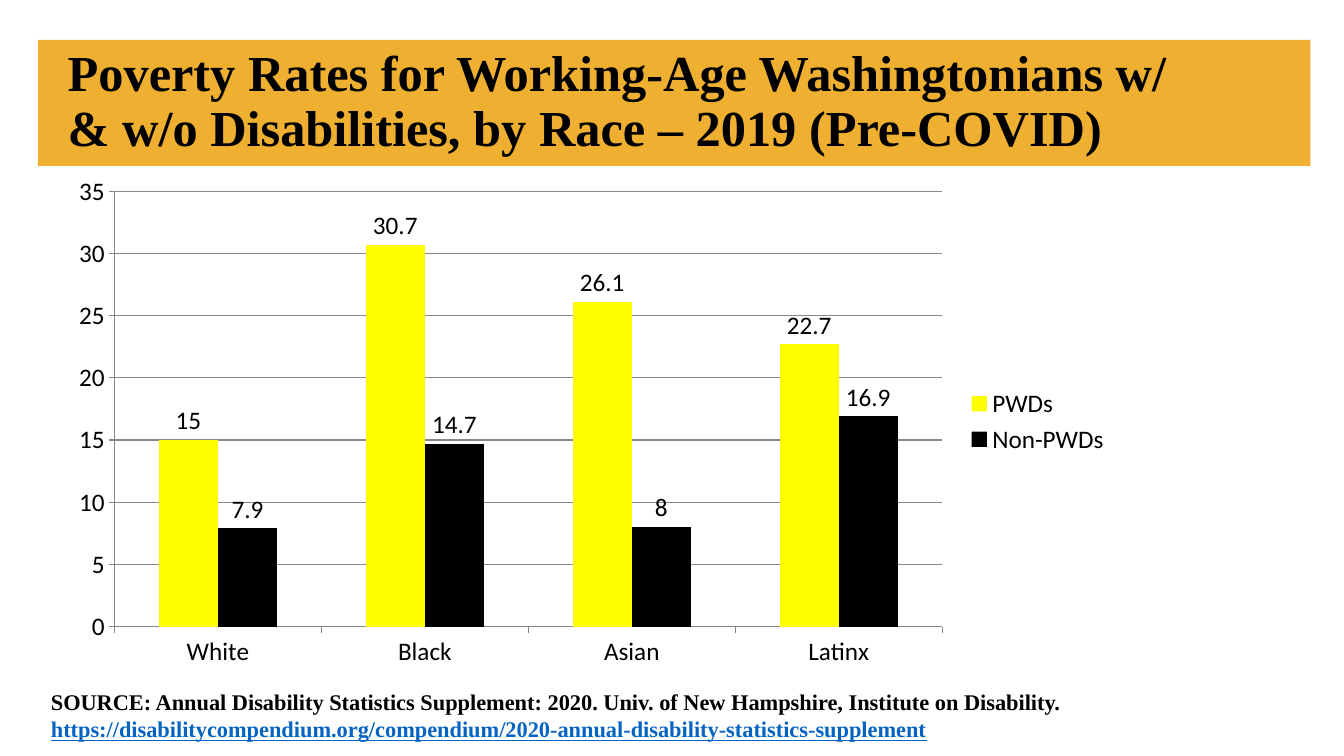
from dataclasses import dataclass

from pptx import Presentation
from pptx.chart.data import CategoryChartData
from pptx.dml.color import RGBColor
from pptx.enum.chart import XL_CHART_TYPE, XL_LABEL_POSITION, XL_LEGEND_POSITION, XL_TICK_MARK
from pptx.enum.shapes import MSO_SHAPE
from pptx.enum.text import MSO_ANCHOR
from pptx.slide import Slide
from pptx.text.text import Font
from pptx.util import Emu, Pt

EMU_PER_PX = 9525


@dataclass(frozen=True)
class Theme:
    band: str = "EFAF30"
    text: str = "000000"
    link: str = "0563C1"
    grid: str = "868686"
    heading_font: str = "Times New Roman"
    chart_font: str = "Calibri"
    title_size: int = 36
    source_size: int = 16
    chart_size: int = 18


@dataclass(frozen=True)
class Box:
    left: int
    top: int
    width: int
    height: int

    def emu(self) -> tuple[Emu, ...]:
        return tuple(Emu(length * EMU_PER_PX)
                     for length in (self.left, self.top, self.width, self.height))


@dataclass(frozen=True)
class Line:
    text: str
    color: str
    underline: bool = False


@dataclass(frozen=True)
class TextBlock:
    box: Box
    lines: tuple[Line, ...]
    size: int
    anchor: MSO_ANCHOR = MSO_ANCHOR.TOP
    line_spacing: float = 1.0


@dataclass(frozen=True)
class RateSeries:
    name: str
    values: tuple[float, ...]
    color: str


THEME = Theme()
BAND = Box(36, 38, 1212, 120)
CHART = Box(55, 158, 1012, 487)
RACES = ("White", "Black", "Asian", "Latinx")
RATES = (
    RateSeries("PWDs", (15, 30.7, 26.1, 22.7), "FFFF00"),
    RateSeries("Non-PWDs", (7.9, 14.7, 8, 16.9), "000000"),
)
TEXT_BLOCKS = (
    TextBlock(
        Box(55, 38, 1104, 120),
        (Line("Poverty Rates for Working-Age Washingtonians w/ & w/o Disabilities, "
              "by Race – 2019 (Pre-COVID)", THEME.text),),
        THEME.title_size, MSO_ANCHOR.MIDDLE, 0.9,
    ),
    TextBlock(
        Box(39, 651, 1240, 87),
        (Line("SOURCE: Annual Disability Statistics Supplement: 2020. "
              "Univ. of New Hampshire, Institute on Disability.", THEME.text),
         Line("https://disabilitycompendium.org/compendium/"
              "2020-annual-disability-statistics-supplement", THEME.link, True)),
        THEME.source_size,
    ),
)


def style_font(font: Font, name: str, size: int, color: str) -> None:
    font.name = name
    font.size = Pt(size)
    font.color.rgb = RGBColor.from_string(color)


def draw_band(slide: Slide, box: Box) -> None:
    band = slide.shapes.add_shape(MSO_SHAPE.RECTANGLE, *box.emu())
    band.shadow.inherit = False
    band.fill.solid()
    band.fill.fore_color.rgb = RGBColor.from_string(THEME.band)
    band.line.fill.background()


def draw_text(slide: Slide, block: TextBlock) -> None:
    text_frame = slide.shapes.add_textbox(*block.box.emu()).text_frame
    text_frame.word_wrap = True
    text_frame.vertical_anchor = block.anchor
    text_frame.text = "\n".join(line.text for line in block.lines)
    for paragraph, line in zip(text_frame.paragraphs, block.lines):
        paragraph.line_spacing = block.line_spacing
        font = paragraph.runs[0].font
        style_font(font, THEME.heading_font, block.size, line.color)
        font.bold = True
        font.underline = line.underline


def draw_chart(slide: Slide, box: Box) -> None:
    chart_data = CategoryChartData()
    chart_data.categories = RACES
    for rate in RATES:
        chart_data.add_series(rate.name, rate.values)
    chart = slide.shapes.add_chart(
        XL_CHART_TYPE.COLUMN_CLUSTERED, *box.emu(), chart_data).chart
    style_font(chart.font, THEME.chart_font, THEME.chart_size, THEME.text)
    chart.has_title = False
    chart.has_legend = True
    chart.legend.position = XL_LEGEND_POSITION.RIGHT
    chart.legend.include_in_layout = False

    grid_color = RGBColor.from_string(THEME.grid)
    for axis in (chart.category_axis, chart.value_axis):
        axis.major_tick_mark = XL_TICK_MARK.OUTSIDE
        axis.minor_tick_mark = XL_TICK_MARK.NONE
        axis.format.line.color.rgb = grid_color
    value_axis = chart.value_axis
    value_axis.minimum_scale = 0
    value_axis.maximum_scale = 35
    value_axis.major_unit = 5
    value_axis.has_major_gridlines = True
    value_axis.major_gridlines.format.line.color.rgb = grid_color

    plot = chart.plots[0]
    plot.gap_width = 150
    plot.overlap = 0
    plot.vary_by_categories = False
    for series, rate in zip(plot.series, RATES):
        series.format.fill.solid()
        series.format.fill.fore_color.rgb = RGBColor.from_string(rate.color)
        series.data_labels.show_value = True
        series.data_labels.position = XL_LABEL_POSITION.OUTSIDE_END


def main() -> None:
    presentation = Presentation()
    presentation.slide_width = Emu(1280 * EMU_PER_PX)
    presentation.slide_height = Emu(720 * EMU_PER_PX)
    slide = presentation.slides.add_slide(presentation.slide_layouts[6])
    draw_band(slide, BAND)
    for block in TEXT_BLOCKS:
        draw_text(slide, block)
    draw_chart(slide, CHART)
    presentation.save("out.pptx")


if __name__ == "__main__":
    main()
